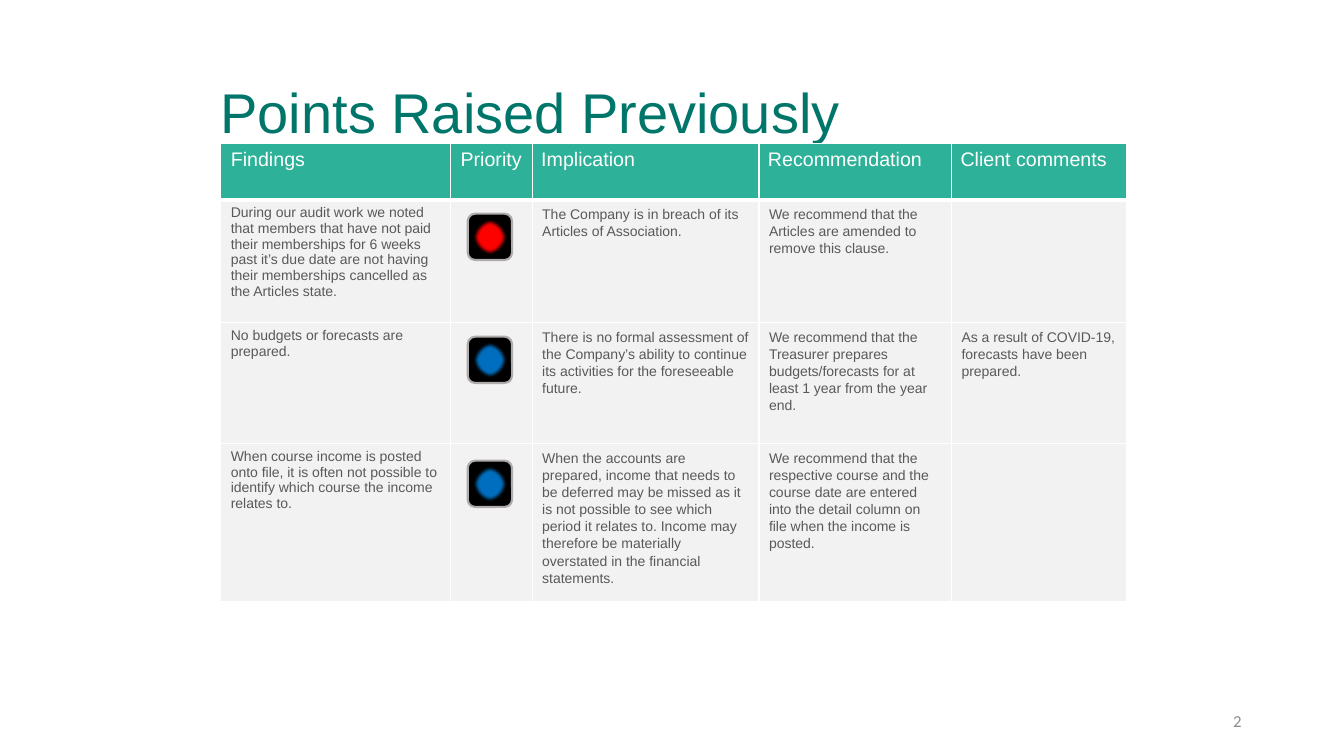
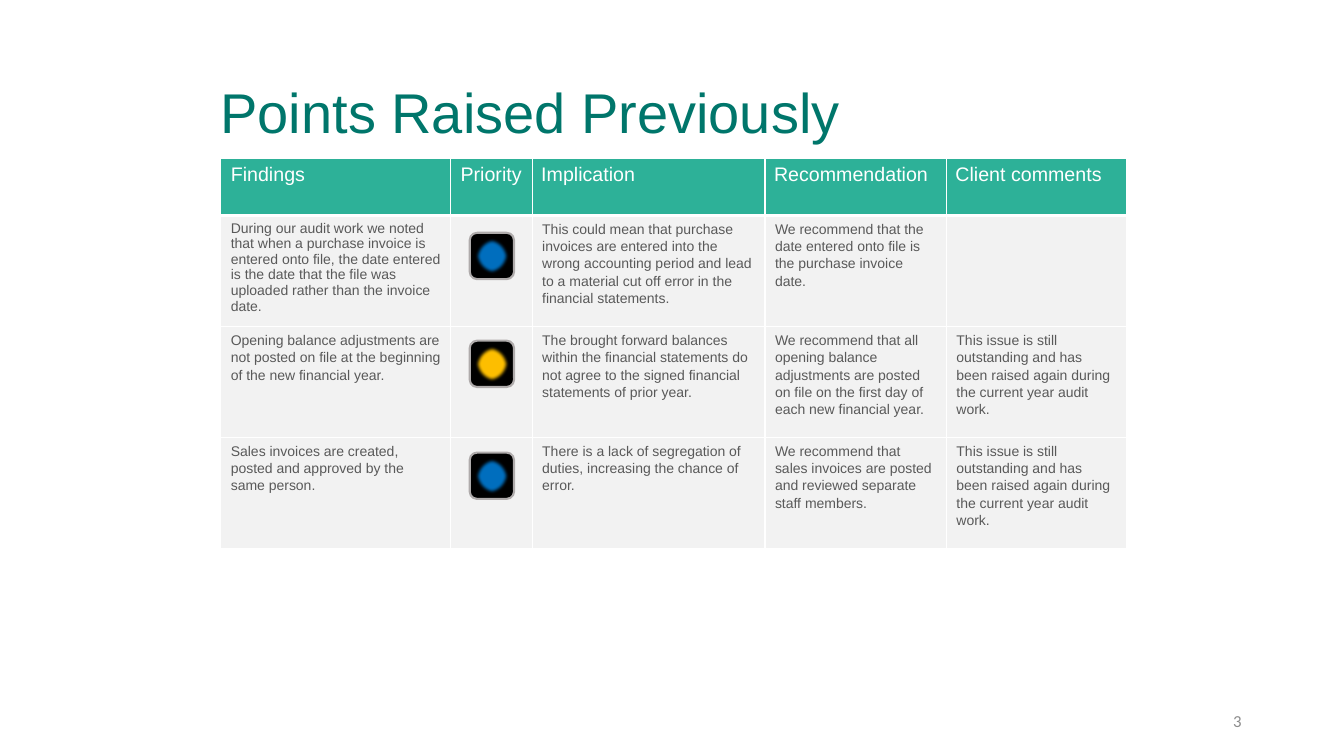
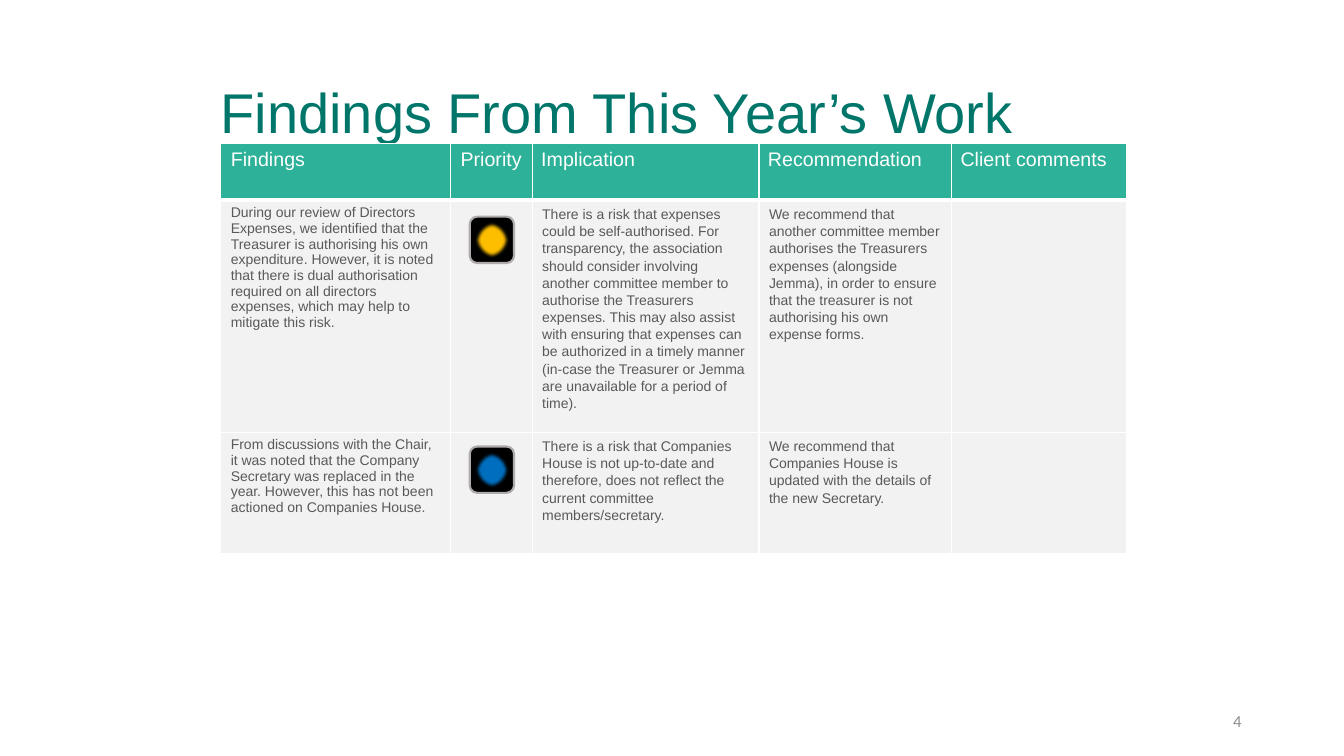
from collections import namedtuple

from lxml.etree import SubElement
from pptx import Presentation
from pptx.dml.color import RGBColor
from pptx.enum.shapes import MSO_SHAPE
from pptx.enum.text import MSO_ANCHOR, PP_ALIGN
from pptx.oxml.ns import qn
from pptx.util import Inches, Pt

TEAL = RGBColor(0x00, 0x76, 0x6B)
MINT = RGBColor(0x2D, 0xB1, 0x98)
WHITE = RGBColor(0xFF, 0xFF, 0xFF)
PALE = RGBColor(0xF2, 0xF2, 0xF2)
INK = RGBColor(0x59, 0x59, 0x59)
GREY = RGBColor(0x8C, 0x8C, 0x8C)
BLACK = RGBColor(0x00, 0x00, 0x00)
SILVER = RGBColor(0xAF, 0xAB, 0xAB)
SKY = RGBColor(0x5B, 0x9B, 0xD5)
RED = RGBColor(0xFF, 0x00, 0x00)
BLUE = RGBColor(0x00, 0x70, 0xC0)
AMBER = RGBColor(0xFF, 0xC0, 0x00)

COLS, ROWS = 160, 90
LEFT = 26.28
HEAD = 6.8
HEADS = ["Findings", "Priority", "Implication", "Recommendation", "Client comments"]
WIDE = [27.36, 9.72, 27, 22.92, 20.88]
EVEN = [27.36, 9.72, 27.72, 21.6, 21.48]

Row = namedtuple("Row", "high light drop loose finding effect advice reply", defaults=[""])


class Deck:
    def __init__(self):
        self.show = Presentation()
        self.show.slide_width = Inches(13.33)
        self.show.slide_height = Inches(7.5)
        self.slide = None

    def x(self, cols):
        return round(self.show.slide_width * cols / COLS)

    def y(self, rows):
        return round(self.show.slide_height * rows / ROWS)

    def box(self, left, top, wide, high):
        return self.x(left), self.y(top), self.x(wide), self.y(high)

    def style(self, para, size, color, face="Arial"):
        for run in para.runs:
            run.font.size = Pt(size)
            run.font.name = face
            run.font.bold = False
            run.font.color.rgb = color

    def text(self, words, area, size, color, face="Arial"):
        frame = self.slide.shapes.add_textbox(*self.box(*area)).text_frame
        frame.word_wrap = True
        frame.vertical_anchor = MSO_ANCHOR.MIDDLE
        frame.text = words
        para = frame.paragraphs[0]
        self.style(para, size, color, face)
        return para

    def page(self, title, number):
        self.slide = self.show.slides.add_slide(self.show.slide_layouts[6])
        para = self.text(title, (25.08, 9, 108.84, 9.36), 40, TEAL)
        para.line_spacing = 0.9
        para = self.text(str(number), (113, 83.4, 36, 4.8), 12, GREY, "Calibri")
        para.alignment = PP_ALIGN.RIGHT

    def edge(self, cell, base):
        props = cell._tc.get_or_add_tcPr()
        for side, width in zip("LRTB", (1, 1, 1, base)):
            line = SubElement(props, qn("a:ln" + side), w=str(Pt(width)))
            fill = SubElement(line, qn("a:solidFill"))
            SubElement(fill, qn("a:srgbClr"), val=str(WHITE))

    def cell(self, cell, words, size, color, back, base=1, loose=False):
        self.edge(cell, base)
        cell.fill.solid()
        cell.fill.fore_color.rgb = back
        cell.text = words
        para = cell.text_frame.paragraphs[0]
        self.style(para, size, color)
        if loose:
            para.line_spacing = 1.1
            para.space_after = Pt(6)

    def table(self, top, widths, rows):
        highs = [HEAD] + [row.high for row in rows]
        area = self.box(LEFT, top, sum(widths), sum(highs))
        table = self.slide.shapes.add_table(len(highs), len(widths), *area).table
        table.horz_banding = False
        for col, wide in zip(table.columns, widths):
            col.width = self.x(wide)
        for line, high in zip(table.rows, highs):
            line.height = self.y(high)
        for c, name in enumerate(HEADS):
            cell = table.cell(0, c)
            self.cell(cell, name, 14, WHITE, MINT, base=3)
            if c > 1:
                cell.margin_left = cell.margin_right = Inches(0.09)
        for r, row in enumerate(rows, 1):
            words = [row.finding, "", row.effect, row.advice, row.reply]
            for c, part in enumerate(words):
                self.cell(table.cell(r, c), part, 10, INK, PALE, loose=c > 0 or row.loose)

    def shape(self, kind, area, fill, edge, width):
        shape = self.slide.shapes.add_shape(kind, *self.box(*area))
        shape.shadow.inherit = False
        shape.fill.solid()
        shape.fill.fore_color.rgb = fill
        shape.line.color.rgb = edge
        shape.line.width = Pt(width)
        return shape

    def light(self, left, top, color):
        wide, high, pad = 5.28, 5.52, 0.6
        self.shape(MSO_SHAPE.ROUNDED_RECTANGLE, (left, top, wide, high), BLACK, SILVER, 1.5)
        area = (left + pad, top + pad, wide - 2 * pad, high - 2 * pad)
        lamp = self.shape(MSO_SHAPE.OVAL, area, color, SKY, 0.5)
        glow = lamp._element.spPr.find(qn("a:effectLst"))
        SubElement(glow, qn("a:softEdge"), rad=str(Pt(2.5)))

    def report(self, title, number, top, widths, left, rows):
        self.page(title, number)
        self.table(top, widths, rows)
        level = top + HEAD
        for row in rows:
            self.light(left, level + row.drop, row.light)
            level += row.high


PAST = [
    Row(14.6, RED, 1.6, False,
        "During our audit work we noted that members that have not paid their memberships for 6 weeks past it’s due date are not having their memberships cancelled as the Articles state.",
        "The Company is in breach of its Articles of Association.",
        "We recommend that the Articles are amended to remove this clause."),
    Row(14.4, BLUE, 1.64, False,
        "No budgets or forecasts are prepared.",
        "There is no formal assessment of the Company’s ability to continue its activities for the foreseeable future.",
        "We recommend that the Treasurer prepares budgets/forecasts for at least 1 year from the year end.",
        "As a result of COVID-19, forecasts have been prepared."),
    Row(17.64, BLUE, 2, False,
        "When course income is posted onto file, it is often not possible to identify which course the income relates to.",
        "When the accounts are prepared, income that needs to be deferred may be missed as it is not possible to see which period it relates to. Income may therefore be materially overstated in the financial statements.",
        "We recommend that the respective course and the course date are entered into the detail column on file when the income is posted."),
]

OPEN = "This issue is still outstanding and has been raised again during the current year audit work."

MORE = [
    Row(13.2, BLUE, 2.08, False,
        "During our audit work we noted that when a purchase invoice is entered onto file, the date entered is the date that the file was uploaded rather than the invoice date.",
        "This could mean that purchase invoices are entered into the wrong accounting period and lead to a material cut off error in the financial statements.",
        "We recommend that the date entered onto file is the purchase invoice date."),
    Row(13.2, AMBER, 1.72, True,
        "Opening balance adjustments are not posted on file at the beginning of the new financial year.",
        "The brought forward balances within the financial statements do not agree to the signed financial statements of prior year.",
        "We recommend that all opening balance adjustments are posted on file on the first day of each new financial year.",
        OPEN),
    Row(13.2, BLUE, 1.84, True,
        "Sales invoices are created, posted and approved by the same person.",
        "There is a lack of segregation of duties, increasing the chance of error.",
        "We recommend that sales invoices are posted and reviewed separate staff members.",
        OPEN),
]

FRESH = [
    Row(25.7, AMBER, 1.96, False,
        "During our review of Directors Expenses, we identified that the Treasurer is authorising his own expenditure. However, it is noted that there is dual authorisation required on all directors expenses, which may help to mitigate this risk.",
        "There is a risk that expenses could be self-authorised. For transparency, the association should consider involving another committee member to authorise the Treasurers expenses. This may also assist with ensuring that expenses can be authorized in a timely manner (in-case the Treasurer or Jemma are unavailable for a period of time).",
        "We recommend that another committee member authorises the Treasurers expenses (alongside Jemma), in order to ensure that the treasurer is not authorising his own expense forms."),
    Row(14.4, BLUE, 3.62, False,
        "From discussions with the Chair, it was noted that the Company Secretary was replaced in the year. However, this has not been actioned on Companies House.",
        "There is a risk that Companies House is not up-to-date and therefore, does not reflect the current committee members/secretary.",
        "We recommend that Companies House is updated with the details of the new Secretary."),
]


def main():
    deck = Deck()
    deck.report("Points Raised Previously", 2, 17.04, WIDE, 55.68, PAST)
    deck.report("Points Raised Previously", 3, 18.84, EVEN, 55.92, MORE)
    deck.report("Findings From This Year’s Work", 4, 17.04, WIDE, 55.92, FRESH)
    deck.show.save("out.pptx")


if __name__ == "__main__":
    main()
